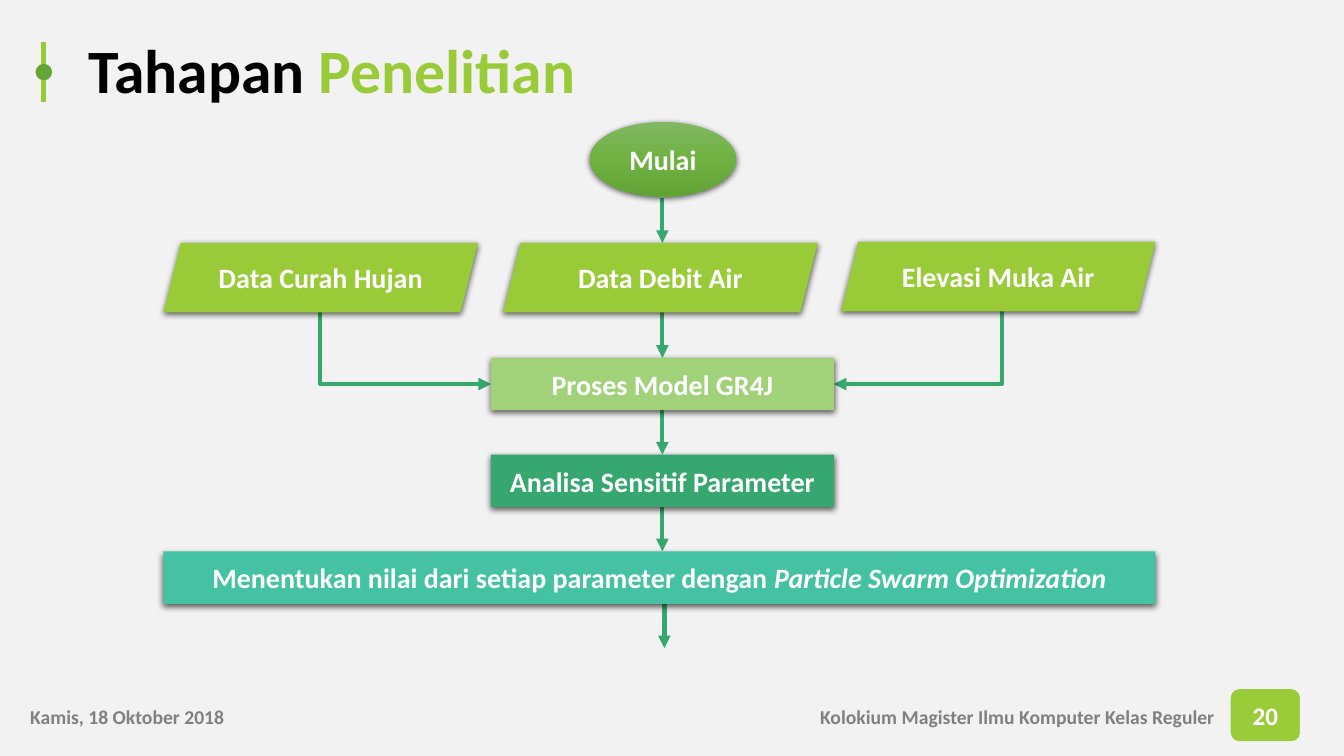
import copy
from dataclasses import dataclass
from typing import Any, Optional

import pptx
import pptx.dml.color
import pptx.enum.shapes
import pptx.enum.text
import pptx.oxml
import pptx.oxml.ns
import pptx.util

Inches = pptx.util.Inches
MSO = pptx.enum.shapes.MSO_SHAPE
LINK = pptx.enum.shapes.MSO_CONNECTOR
ALIGN = pptx.enum.text.PP_ALIGN
ANCHOR = pptx.enum.text.MSO_ANCHOR

LIME = "99CB38"
GREEN = "62A637"
EMERALD = "36A76F"
WHITE = "FFFFFF"
GREY = "808080"
MID_X = 6.57
DATA_W, DATA_H = 3.12, 0.69
STEP_H = 0.52

Run = tuple[str, dict[str, Any]]


@dataclass
class Node:
    kind: Any
    x: float
    y: float
    w: float
    h: float
    fill: str
    runs: list[Run]


@dataclass
class Arrow:
    x1: float
    y1: float
    x2: float
    y2: float
    bend: Optional[int] = None


def rgb(value: str) -> pptx.dml.color.RGBColor:
    return pptx.dml.color.RGBColor.from_string(value)


def element(xml: str) -> Any:
    ns = pptx.oxml.ns.nsdecls("a")
    return pptx.oxml.parse_xml(xml.replace(" ", f" {ns} ", 1))


def add_runs(p: Any, runs: list[Run], size: float, color: str) -> None:
    for text, extra in runs:
        r = p.add_run()
        r.text = text
        fmt = {"name": "Calibri", "size": pptx.util.Pt(size), "bold": True, **extra}
        r.font.color.rgb = rgb(fmt.pop("color", color))
        for key, value in fmt.items():
            setattr(r.font, key, value)


def add_text(s: Any, x: float, y: float, w: float, h: float,
             runs: list[Run], size: float, color: str) -> Any:
    tf = s.shapes.add_textbox(Inches(x), Inches(y), Inches(w), Inches(h)).text_frame
    tf.word_wrap = True
    add_runs(tf.paragraphs[0], runs, size, color)
    return tf


def add_shape(s: Any, node: Node, size: float = 20, line: float = 0) -> Any:
    sp = s.shapes.add_shape(node.kind, Inches(node.x), Inches(node.y),
                            Inches(node.w), Inches(node.h))
    sp.shadow.inherit = False
    sp.fill.solid()
    sp.fill.fore_color.rgb = rgb(node.fill)
    if line:
        sp.line.color.rgb = rgb(node.fill)
        sp.line.width = pptx.util.Pt(line)
    else:
        sp.line.fill.background()
    tf = sp.text_frame
    tf.word_wrap = True
    tf.vertical_anchor = ANCHOR.MIDDLE
    tf.paragraphs[0].alignment = ALIGN.CENTER
    add_runs(tf.paragraphs[0], node.runs, size, WHITE)
    return sp


def add_shadow(sp: Any) -> None:
    effects = sp._element.spPr.find(pptx.oxml.ns.qn("a:effectLst"))
    effects.append(element(
        '<a:outerShdw blurRad="57150" dist="19050" dir="5400000" algn="ctr" '
        'rotWithShape="0"><a:srgbClr val="000000"><a:alpha val="63000"/>'
        '</a:srgbClr></a:outerShdw>'))


def add_gradient(sp: Any, colors: list[str]) -> None:
    sp.fill.gradient()
    sp.fill.gradient_angle = 270
    stops = next(sp._element.spPr.iter(pptx.oxml.ns.qn("a:gsLst")))
    stops.insert(1, copy.deepcopy(stops[0]))
    for i, (stop, color) in enumerate(zip(sp.fill.gradient_stops, colors)):
        stop.position = i / 2
        stop.color.rgb = rgb(color)


def add_arrow(s: Any, arrow: Arrow) -> None:
    kind = LINK.STRAIGHT if arrow.bend is None else LINK.ELBOW
    cx = s.shapes.add_connector(kind, Inches(arrow.x1), Inches(arrow.y1),
                                Inches(arrow.x2), Inches(arrow.y2))
    cx.line.color.rgb = rgb(EMERALD)
    cx.line.width = pptx.util.Pt(3)
    cx.line._get_or_add_ln().append(element('<a:tailEnd type="triangle"/>'))
    spPr = cx._element.spPr
    spPr.append(element("<a:effectLst />"))
    if arrow.bend is not None:
        adjust = next(spPr.iter(pptx.oxml.ns.qn("a:avLst")))
        adjust.append(element(f'<a:gd name="adj1" fmla="val {arrow.bend}"/>'))


def main() -> None:
    prs = pptx.Presentation()
    prs.slide_width, prs.slide_height = Inches(13.33), Inches(7.5)
    s = prs.slides.add_slide(prs.slide_layouts[6])
    s.background.fill.solid()
    s.background.fill.fore_color.rgb = rgb("F2F2F2")

    tf = add_text(s, 0.78, 0.24, 12.1, 0.98,
                  [("Tahapan ", {}), ("Penelitian", {"color": LIME})], 44, "000000")
    tf.vertical_anchor = ANCHOR.MIDDLE
    tf.paragraphs[0].line_spacing = 0.9

    add_shape(s, Node(MSO.ROUNDED_RECTANGLE, 12.21, 6.84, 0.68, 0.51, "9ACC39",
                      [("20", {})]), 18, 0.5)
    tf = add_text(s, 0.2, 6.94, 12.69, 0.34,
                  [("Kamis, 18 Oktober 2018\tKolokium Magister Ilmu Komputer Kelas Reguler", {})],
                  14, GREY)
    tf.paragraphs[0]._p.get_or_add_pPr().append(element(
        f'<a:tabLst ><a:tab pos="{Inches(11.75)}" algn="r"/></a:tabLst>'))

    add_shape(s, Node(MSO.RECTANGLE, 0.41, 0.42, 0.04, 0.59, LIME, []), line=1)
    add_shape(s, Node(MSO.OVAL, 0.36, 0.64, 0.15, 0.15, GREEN, []), line=1)

    arrows = [Arrow(MID_X, y, MID_X, y + 0.45) for y in (1.96, 3.1, 4.06, 5.02)]
    arrows += [
        Arrow(6.59, 5.99, 6.59, 6.43),
        Arrow(3.17, 3.09, 4.87, 3.81, 400),
        Arrow(9.82, 2.96, 8.27, 3.81, -7600),
    ]
    for arrow in arrows:
        add_arrow(s, arrow)

    start = Node(MSO.OVAL, 5.85, 1.21, 1.45, 0.74, GREEN, [("Mulai", {})])
    data = [
        Node(MSO.PARALLELOGRAM, x, y, DATA_W, DATA_H, LIME, [(label, {})])
        for x, y, label in ((1.62, 2.41, "Data Curah Hujan"),
                            (4.99, 2.41, "Data Debit Air"),
                            (8.34, 2.4, "Elevasi Muka Air"))
    ]
    steps = [
        Node(MSO.RECTANGLE, x, 3.55 + 0.96 * i, w, STEP_H, fill, runs)
        for i, (x, w, fill, runs) in enumerate((
            (4.87, 3.4, "A1D279", [("Proses Model GR4J", {})]),
            (4.87, 3.4, EMERALD, [("Analisa Sensitif Parameter", {})]),
            (1.62, 9.84, "45C1A3",
             [("Menentukan nilai dari setiap parameter dengan ", {}),
              ("Particle Swarm Optimization", {"italic": True})])))
    ]
    sp = add_shape(s, start)
    add_gradient(sp, ["81B861", "6FB242", "62A336"])
    add_shadow(sp)
    for node in data + steps:
        add_shadow(add_shape(s, node))

    prs.save("out.pptx")


if __name__ == "__main__":
    main()
